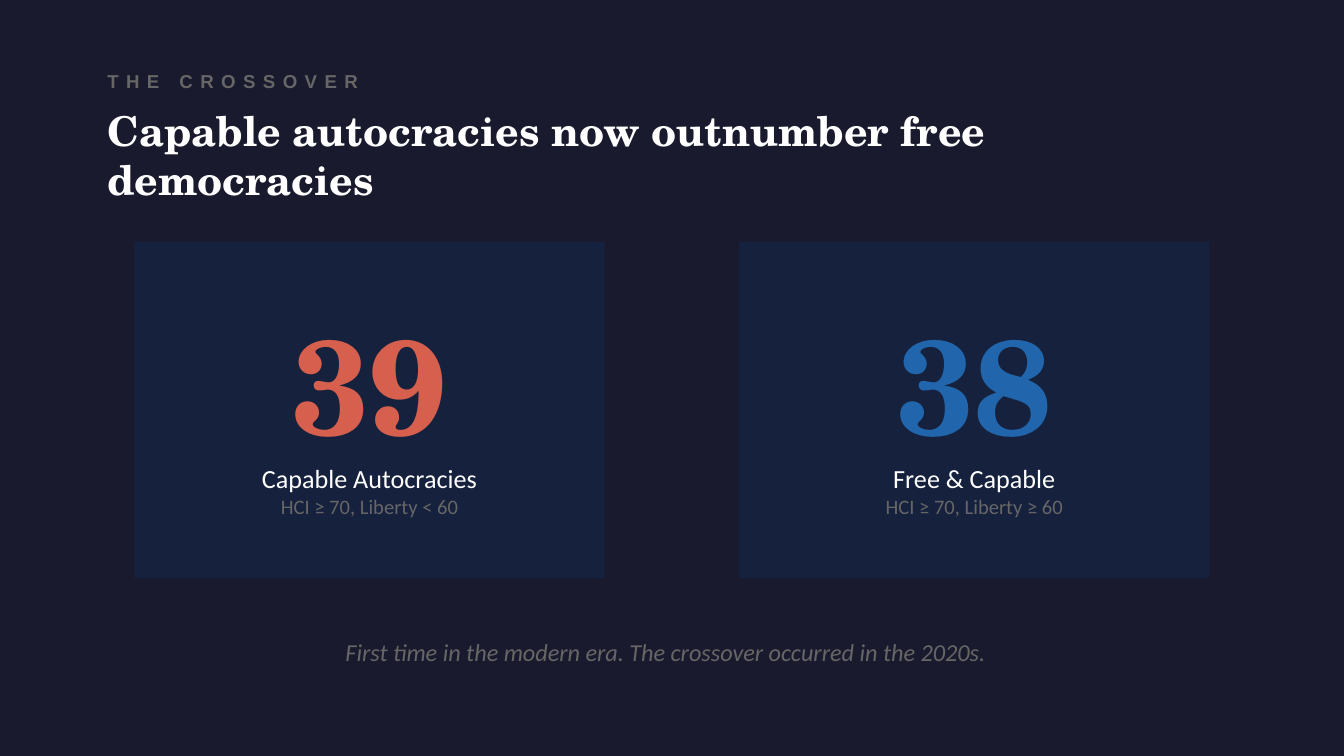
"""Builds a slide that sets capable autocracies against free democracies."""
from pptx import Presentation
from pptx.dml.color import RGBColor
from pptx.enum.shapes import MSO_SHAPE
from pptx.enum.text import MSO_ANCHOR, PP_ALIGN
from pptx.util import Pt

PX = 4572
RECT = MSO_SHAPE.RECTANGLE
MID = MSO_ANCHOR.MIDDLE
LEFT, MIDDLE = PP_ALIGN.LEFT, PP_ALIGN.CENTER
NIGHT = RGBColor(0x1A, 0x1A, 0x2E)
NAVY = RGBColor(0x16, 0x21, 0x3E)
WHITE = RGBColor(0xFF, 0xFF, 0xFF)
GREY = RGBColor(0x66, 0x66, 0x66)
RED = RGBColor(0xD6, 0x60, 0x4D)
BLUE = RGBColor(0x21, 0x66, 0xAC)
SERIF, SANS, LABEL = "TeX Gyre Schola", "Calibri", "Arial"


class Deck:
    def __init__(self):
        self.show = Presentation()
        self.show.slide_width, self.show.slide_height = 2000 * PX, 1125 * PX
        self.slide = self.show.slides.add_slide(self.show.slide_layouts[6])
        fill = self.slide.background.fill
        fill.solid()
        fill.fore_color.rgb = NIGHT
        self.style = {
            "kicker": dict(name=LABEL, size=Pt(10), bold=True, color=GREY),
            "title": dict(name=SERIF, size=Pt(22), bold=True, color=WHITE),
            "count": dict(name=SERIF, size=Pt(72), bold=True),
            "group": dict(name=SANS, size=Pt(14), color=WHITE),
            "rule": dict(name=SANS, size=Pt(11), color=GREY),
            "note": dict(name=SANS, size=Pt(13), italic=True, color=GREY),
        }

    def text(self, box, lines, align=LEFT, gap=0):
        frame = self.slide.shapes.add_textbox(*(n * PX for n in box)).text_frame
        frame.word_wrap = True
        frame.vertical_anchor = MID
        for i, (kind, words, extra) in enumerate(lines):
            para = frame.add_paragraph() if i else frame.paragraphs[0]
            para.alignment = align
            run = para.add_run()
            run.text = words
            for key, value in {**self.style[kind], **extra}.items():
                if key == "color":
                    run.font.color.rgb = value
                else:
                    setattr(run.font, key, value)
            if gap:
                run.font._element.set("spc", str(gap))

    def panel(self, box):
        shape = self.slide.shapes.add_shape(RECT, *(n * PX for n in box))
        shape.shadow.inherit = False
        shape.fill.solid()
        shape.fill.fore_color.rgb = NAVY
        shape.line.fill.background()

    def card(self, left, count, color, group, rule):
        box = (left, 360, 700, 500)
        self.panel(box)
        self.text(box, [("count", count, {"color": color}),
                        ("group", group, {}), ("rule", rule, {})], MIDDLE)

    def save(self):
        self.show.save("out.pptx")


def main():
    deck = Deck()
    deck.text((140, 80, 1600, 80), [("kicker", "THE CROSSOVER", {})], gap=400)
    title = "Capable autocracies now outnumber free democracies"
    deck.text((140, 170, 1700, 120), [("title", title, {})])
    cards = [("39", RED, "Capable Autocracies", "HCI ≥ 70, Liberty < 60"),
             ("38", BLUE, "Free & Capable", "HCI ≥ 70, Liberty ≥ 60")]
    for i, card in enumerate(cards):
        deck.card(200 + 900 * i, *card)
    note = "First time in the modern era. The crossover occurred in the 2020s."
    deck.text((140, 920, 1700, 100), [("note", note, {})], MIDDLE)
    deck.save()


if __name__ == "__main__":
    main()
